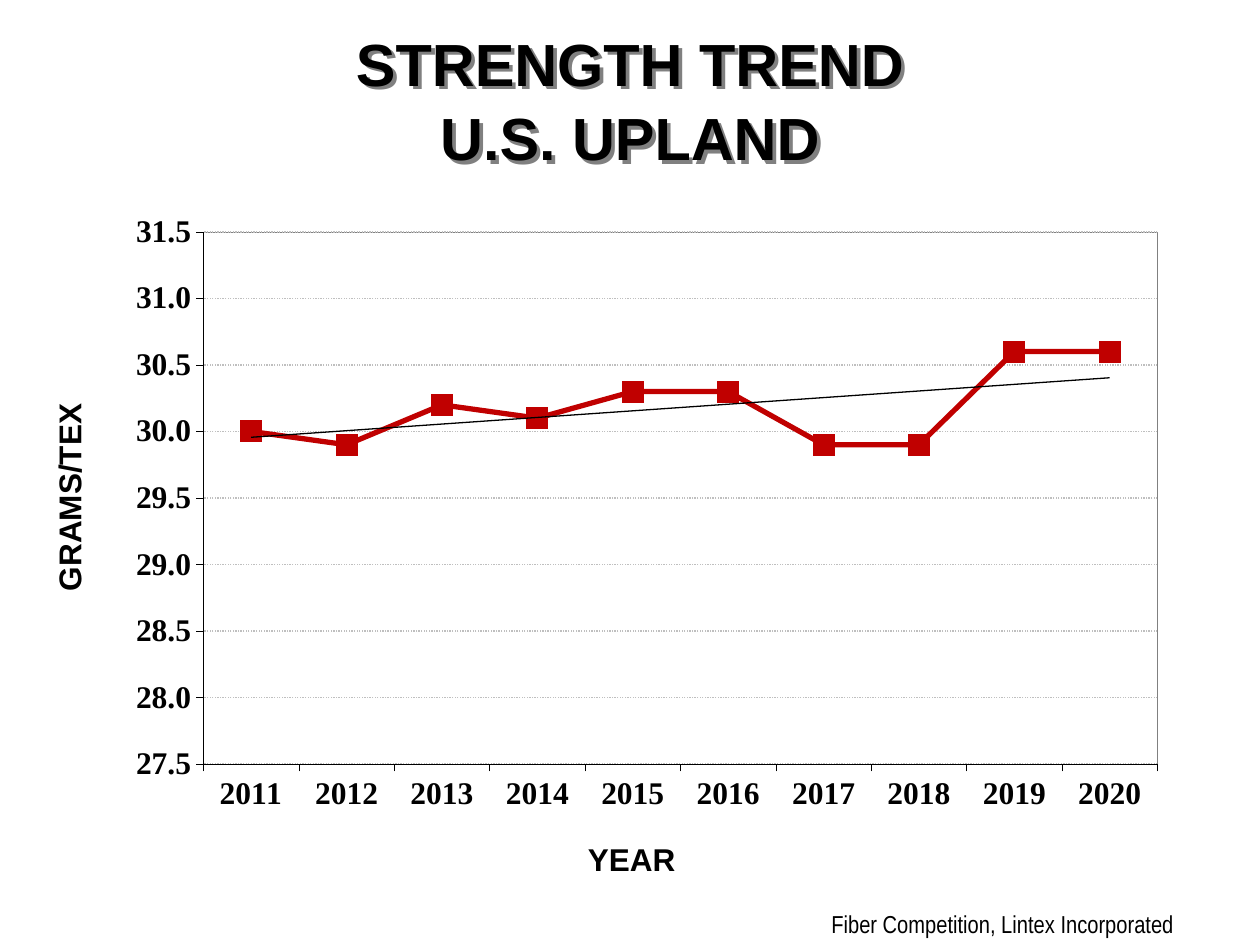
from lxml.etree import SubElement
from pptx import Presentation
from pptx.chart.data import CategoryChartData
from pptx.dml.color import RGBColor
from pptx.enum.chart import XL_CHART_TYPE, XL_MARKER_STYLE, XL_TICK_MARK
from pptx.enum.dml import MSO_LINE
from pptx.enum.text import MSO_ANCHOR, MSO_AUTO_SIZE, PP_ALIGN
from pptx.oxml import parse_xml
from pptx.oxml.ns import nsdecls, qn
from pptx.util import Emu, Pt

# Content
TITLE = "STRENGTH TREND\vU.S. UPLAND"
YEARS = [str(year) for year in range(2011, 2021)]
STRENGTHS = [30, 29.9, 30.2, 30.1, 30.3, 30.3, 29.9, 29.9, 30.6, 30.6]

BLACK = RGBColor(0, 0, 0)
RED = RGBColor(0xC0, 0, 0)
GRID_GRAY = RGBColor(0xBF, 0xBF, 0xBF)

HEADING = dict(name="Arial", size=Pt(18), bold=True)
CREDIT = dict(name="Arial Narrow", size=Pt(14), bold=False)
AXIS = dict(name="Times New Roman", size=Pt(18), bold=True)

# Text, box in px, rotation, format, box without margins
LABELS = [
    ("GRAMS/TEX", (-31, 472, 200, 38), 270, HEADING, True),
    ("YEAR", (588, 840, 100, 38), 0, HEADING, True),
    ("Fiber Competition, Lintex Incorporated", (819, 903, 441, 42), 0, CREDIT, False),
]
TITLE_BOX = (94, 21, 1072, 158)
CHART_BOX = (36, 41, 1188, 864)
PLOT_LAYOUT = dict(x=0.141, y=0.221, w=0.803, h=0.616)


def px(value):
    return Emu(round(value * 914400 / 126))


def format_object(target, values):
    for name, value in values.items():
        setattr(target, name, value)


def format_font(font, values):
    format_object(font, values)
    font.color.rgb = BLACK


def format_line(line, color, width):
    line.color.rgb = color
    line.width = Pt(width)


def add_title(slide):
    title = slide.shapes.title
    format_object(title, dict(zip(("left", "top", "width", "height"), map(px, TITLE_BOX))))
    frame = title.text_frame
    frame.text = TITLE
    format_object(frame, dict(vertical_anchor=MSO_ANCHOR.MIDDLE, word_wrap=True,
                              auto_size=MSO_AUTO_SIZE.NONE,
                              margin_top=px(6), margin_bottom=px(10)))
    paragraph = frame.paragraphs[0]
    format_object(paragraph, dict(alignment=PP_ALIGN.CENTER, line_spacing=1.05))
    for run in paragraph.runs:
        format_font(run.font, dict(name="Arial", size=Pt(34), bold=True))
    # Without a fill, the shadow falls from the letters
    title.fill.background()
    title._element.spPr.append(parse_xml(
        f'<a:effectLst {nsdecls("a")}><a:outerShdw dist="38100" dir="2700000">'
        '<a:srgbClr val="808080"/></a:outerShdw></a:effectLst>'))


def add_label(slide, text, box, rotation, font, flush):
    shape = slide.shapes.add_textbox(*map(px, box))
    shape.rotation = rotation
    frame = shape.text_frame
    frame.text = text
    format_object(frame, dict(word_wrap=True, auto_size=MSO_AUTO_SIZE.NONE))
    if flush:
        format_object(frame, dict(margin_left=0, margin_top=0,
                                  margin_right=0, margin_bottom=0))
    format_font(frame.paragraphs[0].runs[0].font, font)


def add_strength_chart(slide):
    data = CategoryChartData(number_format="0.0")
    data.categories = YEARS
    data.add_series("Series 1", STRENGTHS)
    chart = slide.shapes.add_chart(
        XL_CHART_TYPE.LINE_MARKERS, *map(px, CHART_BOX), data).chart
    format_object(chart, dict(has_title=False, has_legend=False))
    format_font(chart.font, dict(name="Times New Roman", size=Pt(10)))

    # Axes and grid
    for axis in (chart.category_axis, chart.value_axis):
        format_object(axis, dict(major_tick_mark=XL_TICK_MARK.OUTSIDE,
                                 minor_tick_mark=XL_TICK_MARK.NONE))
        format_font(axis.tick_labels.font, AXIS)
        format_line(axis.format.line, BLACK, 0.25)
    value_axis = chart.value_axis
    format_object(value_axis, dict(minimum_scale=27.5, maximum_scale=31.5,
                                   major_unit=0.5, has_major_gridlines=True))
    format_object(value_axis.tick_labels,
                  dict(number_format="0.0", number_format_is_linked=False))
    grid = value_axis.major_gridlines.format.line
    format_line(grid, GRID_GRAY, 0.75)
    grid.dash_style = MSO_LINE.ROUND_DOT

    # Strength line
    chart.plots[0].vary_by_categories = False
    series = chart.plots[0].series[0]
    series.smooth = False
    format_line(series.format.line, RED, 3)
    marker = series.marker
    format_object(marker, dict(style=XL_MARKER_STYLE.SQUARE, size=12))
    marker.format.fill.solid()
    marker.format.fill.fore_color.rgb = RED
    format_line(marker.format.line, RED, 0.75)

    # Linear trend line
    series._element.find(qn("c:cat")).addprevious(parse_xml(
        f'<c:trendline {nsdecls("c", "a")}><c:spPr><a:ln w="9525"><a:solidFill>'
        '<a:srgbClr val="000000"/></a:solidFill></a:ln></c:spPr>'
        '<c:trendlineType val="linear"/><c:dispRSqr val="0"/><c:dispEq val="0"/>'
        '</c:trendline>'))

    # Plot position, plot border and clear chart background
    plot_area = chart._chartSpace.chart.plotArea
    for old_layout in plot_area.findall(qn("c:layout")):
        plot_area.remove(old_layout)
    layout = parse_xml(f'<c:layout {nsdecls("c")}><c:manualLayout/></c:layout>')
    settings = dict(layoutTarget="inner", xMode="edge", yMode="edge", **PLOT_LAYOUT)
    for name, value in settings.items():
        SubElement(layout[0], qn(f"c:{name}")).set("val", str(value))
    plot_area.insert(0, layout)
    plot_area.append(parse_xml(
        f'<c:spPr {nsdecls("c", "a")}><a:noFill/><a:ln w="3175"><a:solidFill>'
        '<a:srgbClr val="808080"/></a:solidFill></a:ln></c:spPr>'))
    chart._chartSpace.chart.addnext(parse_xml(
        f'<c:spPr {nsdecls("c", "a")}><a:noFill/><a:ln><a:noFill/></a:ln></c:spPr>'))


def main():
    presentation = Presentation()
    format_object(presentation, dict(slide_width=px(1260), slide_height=px(945)))
    slide = presentation.slides.add_slide(presentation.slide_layouts[5])
    add_title(slide)
    for label in LABELS:
        add_label(slide, *label)
    add_strength_chart(slide)
    presentation.save("out.pptx")


if __name__ == "__main__":
    main()
